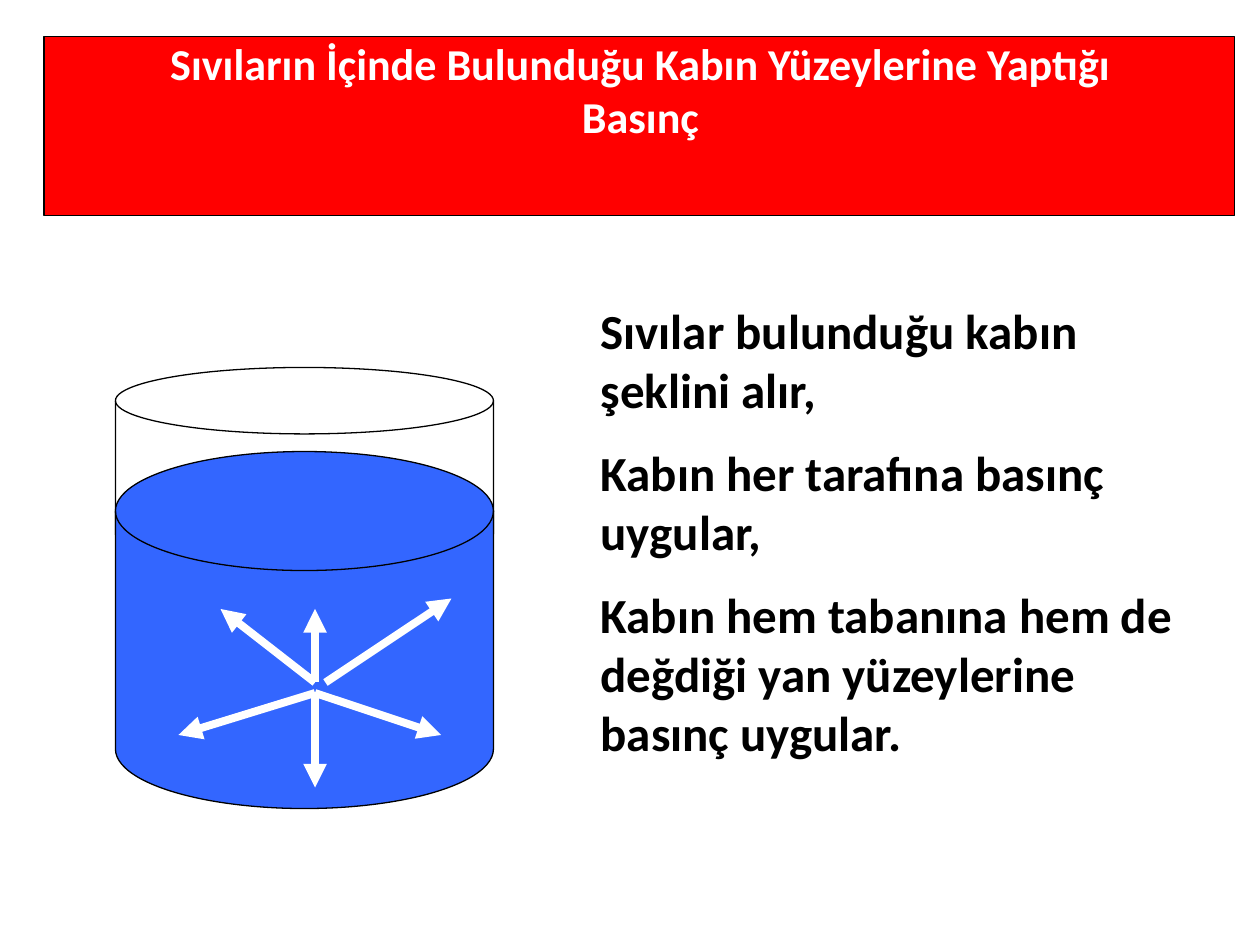
from dataclasses import dataclass

from lxml import etree
from pptx import Presentation
from pptx.dml import color
from pptx.enum import shapes, text
from pptx.oxml import ns
from pptx.util import Pt


@dataclass(frozen=True)
class Theme:
    banner: color.RGBColor = color.RGBColor(255, 0, 0)
    liquid: color.RGBColor = color.RGBColor(51, 102, 255)
    light: color.RGBColor = color.RGBColor(255, 255, 255)
    dark: color.RGBColor = color.RGBColor(0, 0, 0)
    font: str = "Calibri"
    title_size: float = 25.2
    body_size: float = 28
    outline: float = 0.75
    arrow: float = 4.5


THEME = Theme()
TITLE = "Sıvıların İçinde Bulunduğu Kabın Yüzeylerine Yaptığı Basınç"
STATEMENTS = [
    "Sıvılar bulunduğu kabın şeklini alır,",
    "Kabın her tarafına basınç uygular,",
    "Kabın hem tabanına hem de değdiği yan yüzeylerine basınç uygular.",
]
PRESSURE_ARROWS = [
    ((186, 390), (258, 342)),
    ((180, 390), (126, 348)),
    ((180, 396), (180, 450)),
    ((180, 396), (252, 420)),
    ((180, 396), (102, 420)),
    ((180, 390), (180, 348)),
]


def apply_format(target, values):
    for name, value in values.items():
        setattr(target, name, value)


def place(shape, left, top, width, height):
    apply_format(shape, {"left": Pt(left), "top": Pt(top),
                         "width": Pt(width), "height": Pt(height)})


def add_outlined_shape(slide, kind, box, fill=None):
    shape = slide.shapes.add_shape(kind, *map(Pt, box))
    shape.shadow.inherit = False
    if fill is None:
        shape.fill.background()
    else:
        shape.fill.solid()
        shape.fill.fore_color.rgb = fill
    shape.line.color.rgb = THEME.dark
    shape.line.width = Pt(THEME.outline)
    return shape


def add_arrow(slide, start, end):
    arrow = slide.shapes.add_connector(
        shapes.MSO_CONNECTOR.STRAIGHT, *map(Pt, start + end))
    arrow.line.color.rgb = THEME.light
    arrow.line.width = Pt(THEME.arrow)
    line = arrow.line._get_or_add_ln()
    etree.SubElement(line, ns.qn("a:tailEnd"), type="triangle")
    etree.SubElement(arrow.element.spPr, ns.qn("a:effectLst"))


def fill_placeholder(shape, box, paragraphs, anchor, alignment, size, font_color, gap=0):
    place(shape, *box)
    frame = shape.text_frame
    frame.text = "\n".join(paragraphs)
    apply_format(frame, {"word_wrap": True, "vertical_anchor": anchor,
                         "auto_size": text.MSO_AUTO_SIZE.NONE})
    for paragraph in frame.paragraphs:
        apply_format(paragraph, {"alignment": alignment, "space_before": Pt(0),
                                 "space_after": Pt(gap)})
        apply_format(paragraph.font, {"name": THEME.font, "size": Pt(size), "bold": True})
        for run in paragraph.runs:
            apply_format(run.font, {"name": THEME.font, "size": Pt(size), "bold": True})
            run.font.color.rgb = font_color


def remove_bullets(shape):
    for paragraph in shape.text_frame.paragraphs:
        properties = paragraph._p.get_or_add_pPr()
        properties.set("marL", "0")
        properties.set("indent", "0")
        bullet = etree.Element(ns.qn("a:buNone"))
        properties.find(ns.qn("a:spcAft")).addnext(bullet)


def main():
    presentation = Presentation()
    apply_format(presentation, {"slide_width": Pt(720), "slide_height": Pt(540)})
    slide = presentation.slides.add_slide(presentation.slide_layouts[1])
    title, body = slide.shapes.title, slide.placeholders[1]

    banner = add_outlined_shape(slide, shapes.MSO_SHAPE.RECTANGLE,
                                (25.2, 20.9, 680.4, 102.2), THEME.banner)
    banner.element.addnext(title.element)
    fill_placeholder(title, (54, 30.2, 624, 42), [TITLE], text.MSO_ANCHOR.MIDDLE,
                     text.PP_ALIGN.CENTER, THEME.title_size, THEME.light)

    disk = shapes.MSO_SHAPE.FLOWCHART_MAGNETIC_DISK
    add_outlined_shape(slide, disk, (66, 210, 216, 114))
    add_outlined_shape(slide, disk, (66, 258, 216, 204), THEME.liquid)
    for start, end in PRESSURE_ARROWS:
        add_arrow(slide, start, end)

    fill_placeholder(body, (336, 168, 342, 276.5), STATEMENTS, text.MSO_ANCHOR.TOP,
                     text.PP_ALIGN.LEFT, THEME.body_size, THEME.dark, gap=14)
    remove_bullets(body)
    presentation.save("out.pptx")


if __name__ == "__main__":
    main()
